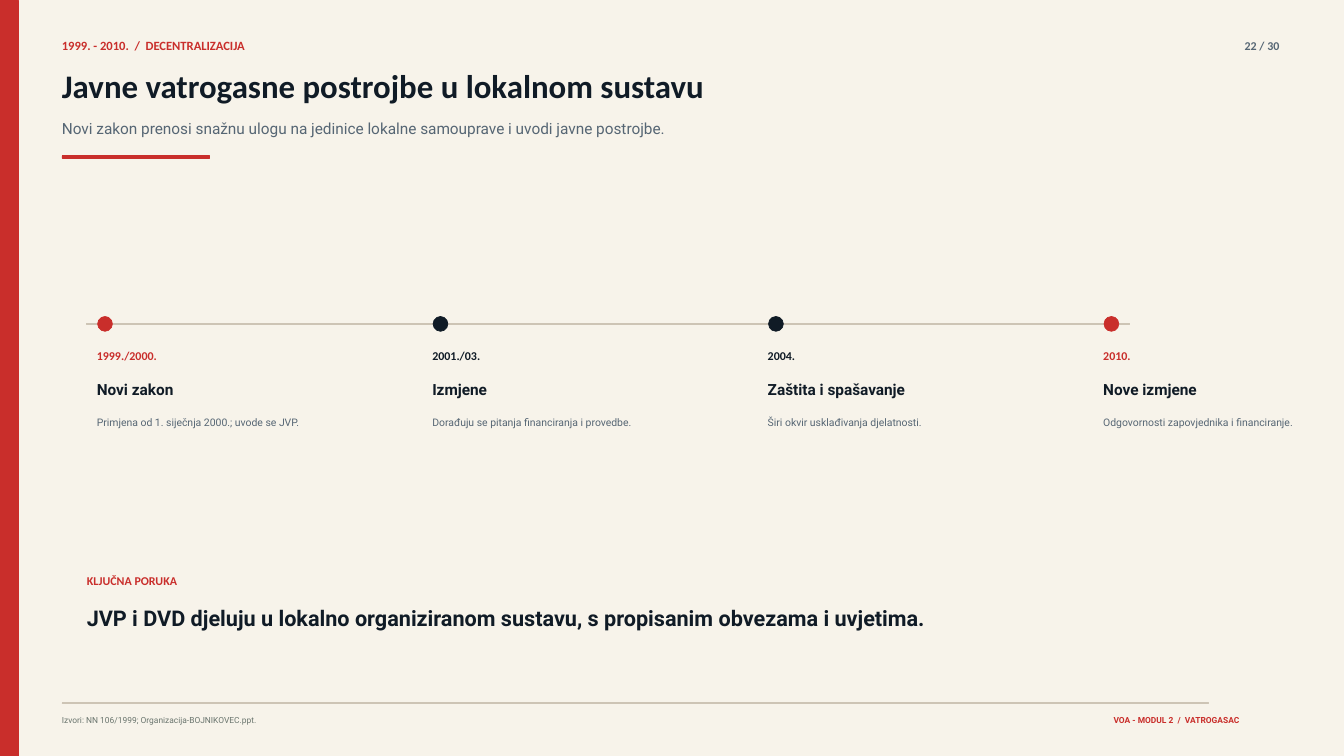
from dataclasses import dataclass

from pptx import Presentation
from pptx.dml.color import RGBColor
from pptx.enum.shapes import MSO_SHAPE
from pptx.enum.text import MSO_ANCHOR, PP_ALIGN
from pptx.util import Cm, Pt

# Content
SECTION = "1999. - 2010.  /  DECENTRALIZACIJA"
PAGE = "22 / 30"
TITLE = "Javne vatrogasne postrojbe u lokalnom sustavu"
SUBTITLE = "Novi zakon prenosi snažnu ulogu na jedinice lokalne samouprave i uvodi javne postrojbe."
MILESTONES = [
    ("1999./2000.", "Novi zakon", "Primjena od 1. siječnja 2000.; uvode se JVP."),
    ("2001./03.", "Izmjene", "Dorađuju se pitanja financiranja i provedbe."),
    ("2004.", "Zaštita i spašavanje", "Širi okvir usklađivanja djelatnosti."),
    ("2010.", "Nove izmjene", "Odgovornosti zapovjednika i financiranje."),
]
KEY_LABEL = "KLJUČNA PORUKA"
KEY_MESSAGE = "JVP i DVD djeluju u lokalno organiziranom sustavu, s propisanim obvezama i uvjetima."
SOURCES = "Izvori: NN 106/1999; Organizacija-BOJNIKOVEC.ppt."
MODULE = "VOA - MODUL 2  /  VATROGASAC"


@dataclass(frozen=True)
class Style:
    size: float
    font: str
    color: str
    bold: bool = True


class Theme:
    paper, red, ink, rule = "F7F3EA", "C92E2B", "101B26", "CDC4B5"
    slate, moss = "566674", "6A756E"
    section = Style(13.5, "Calibri", red)
    page = Style(12.8, "Calibri", slate)
    title = Style(35.2, "Calibri", ink)
    subtitle = Style(16.5, "Roboto", slate, False)
    label = Style(12.8, "Calibri", red)
    label_dark = Style(12.8, "Calibri", ink)
    heading = Style(16.5, "Roboto", ink)
    detail = Style(11.2, "Roboto", slate, False)
    message = Style(23.2, "Roboto", ink)
    sources = Style(9, "Roboto", moss, False)
    footer = Style(9, "Roboto", red)


# Layout in centimetres
WIDTH, HEIGHT = 50.8, 28.58
MARGIN = 2.34
INDENT = 3.28
FIRST_MILESTONE, MILESTONE_STEP = 3.66, 12.68
DOT = 0.56
AXIS_TOP, AXIS_THICKNESS = 12.22, 0.05

presentation = Presentation()
presentation.slide_width, presentation.slide_height = Cm(WIDTH), Cm(HEIGHT)
slide = presentation.slides.add_slide(presentation.slide_layouts[6])
slide.background.fill.solid()
slide.background.fill.fore_color.rgb = RGBColor.from_string(Theme.paper)


def add_block(left, top, width, height, color, kind=MSO_SHAPE.RECTANGLE):
    shape = slide.shapes.add_shape(kind, Cm(left), Cm(top), Cm(width), Cm(height))
    shape.shadow.inherit = False
    shape.fill.solid()
    shape.fill.fore_color.rgb = RGBColor.from_string(color)
    shape.line.color.rgb = RGBColor.from_string(color)
    shape.line.width = Pt(0)


def add_text(left, top, width, height, text, style, align=PP_ALIGN.LEFT):
    box = slide.shapes.add_textbox(Cm(left), Cm(top), Cm(width), Cm(height))
    frame = box.text_frame
    frame.word_wrap = True
    frame.vertical_anchor = MSO_ANCHOR.TOP
    frame.margin_left = frame.margin_right = frame.margin_top = frame.margin_bottom = 0
    paragraph = frame.paragraphs[0]
    paragraph.alignment = align
    run = paragraph.add_run()
    run.text = text
    run.font.size = Pt(style.size)
    run.font.name = style.font
    run.font.bold = style.bold
    run.font.color.rgb = RGBColor.from_string(style.color)


# Side band and header
add_block(0, 0, 0.69, HEIGHT, Theme.red)
add_text(MARGIN, 1.42, 32.54, 0.58, SECTION, Theme.section)
add_text(44.4, 1.45, 3.96, 0.53, PAGE, Theme.page, PP_ALIGN.RIGHT)
add_text(MARGIN, 2.49, 46.02, 1.57, TITLE, Theme.title)
add_text(MARGIN, 4.52, 22.91, 0.89, SUBTITLE, Theme.subtitle)
add_block(MARGIN, 5.89, 5.56, 0.1, Theme.red)

# Footer
add_block(MARGIN, 26.57, 43.33, 0.03, Theme.rule)
add_text(MARGIN, 27.05, 36, 0.41, SOURCES, Theme.sources)
add_text(39.17, 27.05, 7.67, 0.41, MODULE, Theme.footer, PP_ALIGN.RIGHT)

# Timeline: the first and last milestones are red
add_block(INDENT, AXIS_TOP, 39.42, AXIS_THICKNESS, Theme.rule)
dot_top = AXIS_TOP + AXIS_THICKNESS / 2 - DOT / 2
for index, (date, heading, detail) in enumerate(MILESTONES):
    left = FIRST_MILESTONE + index * MILESTONE_STEP
    date_style = Theme.label if index in (0, len(MILESTONES) - 1) else Theme.label_dark
    add_block(left + 0.03, dot_top, DOT, DOT, date_style.color, MSO_SHAPE.OVAL)
    add_text(left, 13.16, 6.88, 0.56, date, date_style)
    add_text(left, 14.38, 7.54, 0.84, heading, Theme.heading)
    add_text(left, 15.72, 7.72, 0.61, detail, Theme.detail)

# Key message
add_text(INDENT, 21.69, 8.46, 0.56, KEY_LABEL, Theme.label)
add_text(INDENT, 22.86, 39.17, 1.19, KEY_MESSAGE, Theme.message)

presentation.save("out.pptx")
